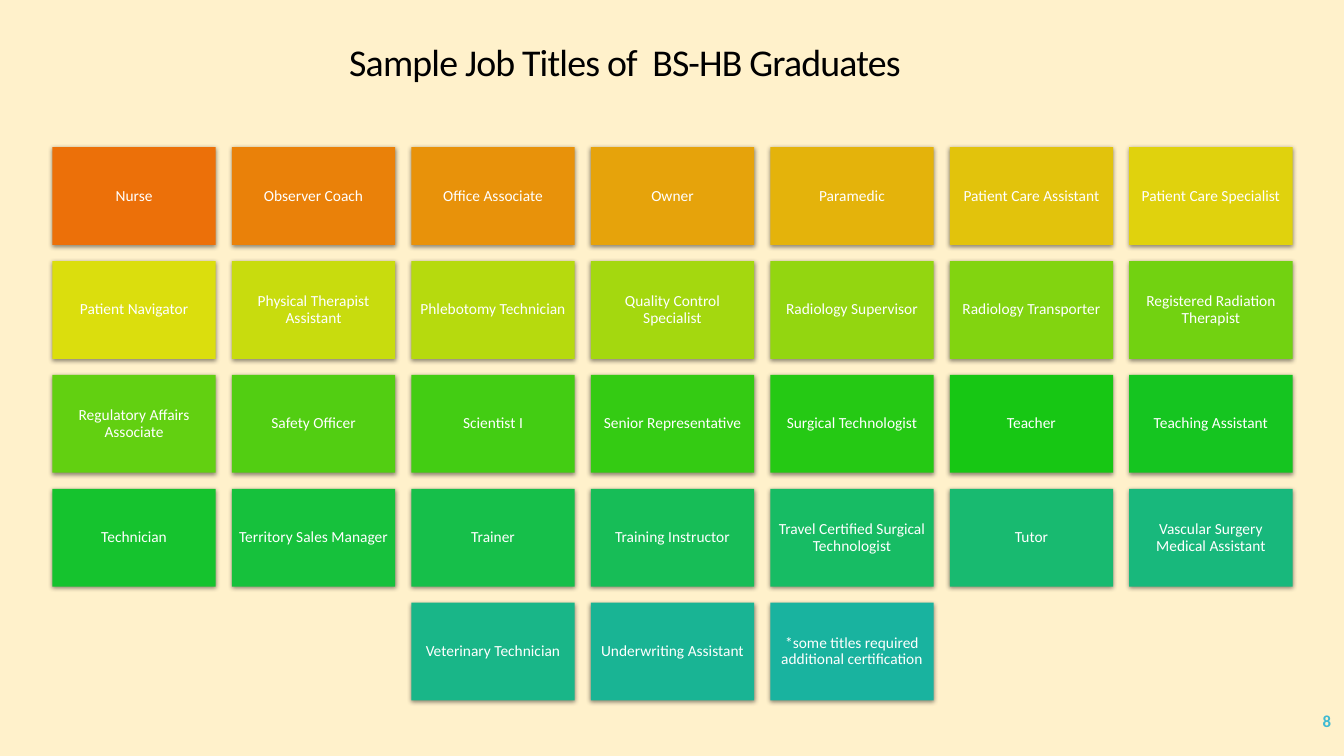
from colorsys import hls_to_rgb
from dataclasses import dataclass

from pptx import Presentation
from pptx.dml.color import RGBColor
from pptx.enum.shapes import MSO_SHAPE
from pptx.enum.text import MSO_ANCHOR, PP_ALIGN
from pptx.oxml import parse_xml
from pptx.oxml.ns import nsdecls, qn
from pptx.util import Inches, Pt


@dataclass(frozen=True)
class Theme:
    font: str = "Calibri"
    background: str = "FFF1CB"
    title: str = "000000"
    tile_text: str = "FFFFFF"
    page_number: str = "40BAD2"
    shadow: str = "000000"
    # Hue in degrees, lightness and saturation of the first and last tile
    first_tile: tuple = (27.13, 0.48, 0.93)
    last_tile: tuple = (172.16, 0.4, 0.75)
    title_size: int = 27
    tile_size: int = 11
    page_number_size: int = 12


THEME = Theme()

JOB_ROWS = [
    ["Nurse", "Observer Coach", "Office Associate", "Owner", "Paramedic",
     "Patient Care Assistant", "Patient Care Specialist"],
    ["Patient Navigator", "Physical Therapist Assistant", "Phlebotomy Technician",
     "Quality Control Specialist", "Radiology Supervisor", "Radiology Transporter",
     "Registered Radiation Therapist"],
    ["Regulatory Affairs Associate", "Safety Officer", "Scientist I",
     "Senior Representative", "Surgical Technologist", "Teacher", "Teaching Assistant"],
    ["Technician", "Territory Sales Manager", "Trainer", "Training Instructor",
     "Travel Certified Surgical Technologist", "Tutor",
     "Vascular Surgery Medical Assistant"],
    ["Veterinary Technician", "Underwriting Assistant",
     "*some titles required additional certification"],
]

GRID_LEFT, GRID_TOP = 0.52, 1.46
TILE_WIDTH, TILE_HEIGHT, GAP = 1.62, 0.97, 0.16


def write_text(shape, text, *, size, color, align=PP_ALIGN.CENTER, bold=False,
               line_spacing=0.9, inset=None, tracking=None):
    """Fill the shape with one formatted paragraph; tracking is in points."""
    frame = shape.text_frame
    frame.word_wrap = True
    frame.vertical_anchor = MSO_ANCHOR.MIDDLE
    if inset is not None:
        frame.margin_left = frame.margin_right = Inches(inset)
        frame.margin_top = frame.margin_bottom = Inches(inset)
    paragraph = frame.paragraphs[0]
    paragraph.alignment = align
    paragraph.line_spacing = line_spacing
    run = paragraph.add_run()
    run.text = text
    run.font.name = THEME.font
    run.font.size = Pt(size)
    run.font.bold = bold
    run.font.color.rgb = RGBColor.from_string(color)
    if tracking is not None:
        run.font._element.set("spc", str(round(tracking * 100)))


def tile_color(step):
    """Blend from the first to the last tile colour, step running from 0 to 1."""
    hue, lightness, saturation = (
        start + (end - start) * step
        for start, end in zip(THEME.first_tile, THEME.last_tile)
    )
    return RGBColor(*(round(255 * c) for c in hls_to_rgb(hue / 360, lightness, saturation)))


presentation = Presentation()
presentation.slide_width = Inches(13.33)
presentation.slide_height = Inches(7.5)
slide = presentation.slides.add_slide(presentation.slide_layouts[6])
slide.background.fill.solid()
slide.background.fill.fore_color.rgb = RGBColor.from_string(THEME.background)

page_number = slide.shapes.add_textbox(Inches(11.63), Inches(6.95), Inches(1.67), Inches(0.4))
write_text(page_number, "8", size=THEME.page_number_size, color=THEME.page_number,
           align=PP_ALIGN.RIGHT, bold=True, line_spacing=1.0)

title = slide.shapes.add_textbox(Inches(0), Inches(0.4), Inches(12.39), Inches(0.47))
write_text(title, "Sample Job Titles of  BS-HB Graduates", size=THEME.title_size,
           color=THEME.title, tracking=-0.6)

columns = len(JOB_ROWS[0])
last_index = sum(len(jobs) for jobs in JOB_ROWS) - 1
for row, jobs in enumerate(JOB_ROWS):
    first_column = (columns - len(jobs)) / 2
    for position, job in enumerate(jobs):
        tile = slide.shapes.add_shape(
            MSO_SHAPE.RECTANGLE,
            Inches(GRID_LEFT + (first_column + position) * (TILE_WIDTH + GAP)),
            Inches(GRID_TOP + row * (TILE_HEIGHT + GAP)),
            Inches(TILE_WIDTH), Inches(TILE_HEIGHT))
        tile.fill.solid()
        tile.fill.fore_color.rgb = tile_color((row * columns + position) / last_index)
        tile.line.fill.background()
        tile.shadow.inherit = False
        tile._element.spPr.find(qn("a:effectLst")).append(parse_xml(
            f'<a:outerShdw {nsdecls("a")} blurRad="{Pt(3.5)}" dist="{Pt(1.1)}" '
            f'dir="5400000" rotWithShape="0"><a:srgbClr val="{THEME.shadow}">'
            '<a:alpha val="45000"/></a:srgbClr></a:outerShdw>'))
        write_text(tile, job, size=THEME.tile_size, color=THEME.tile_text, inset=0.05)

presentation.save("out.pptx")
